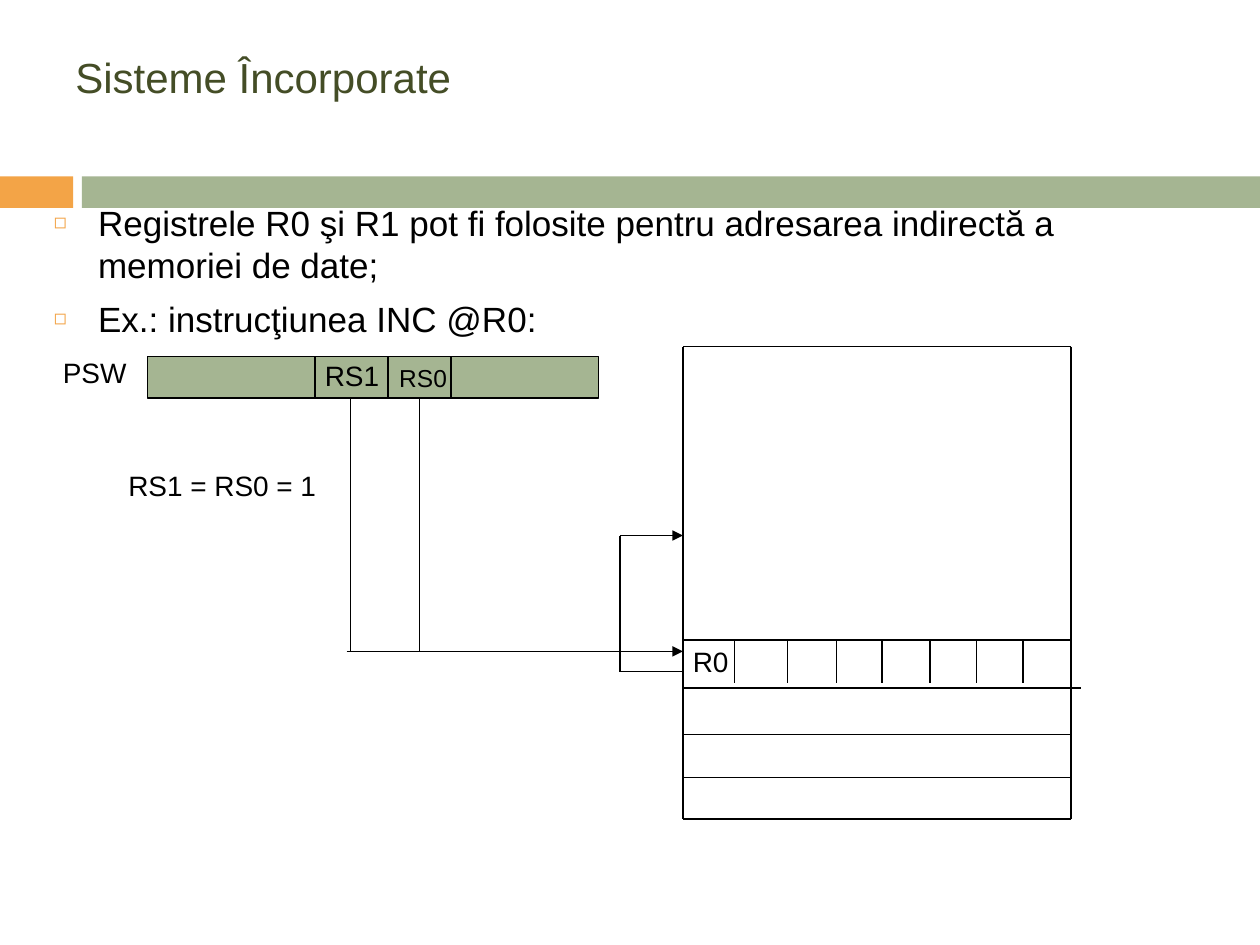
from dataclasses import dataclass
from lxml import etree
from pptx import Presentation
from pptx.dml.color import RGBColor
from pptx.enum.shapes import MSO_CONNECTOR, MSO_SHAPE
from pptx.enum.text import MSO_ANCHOR, PP_ALIGN
from pptx.oxml.ns import qn
from pptx.slide import Slide
from pptx.util import Inches, Pt

RECTANGLE = MSO_SHAPE.RECTANGLE
STRAIGHT = MSO_CONNECTOR.STRAIGHT
TOP, MIDDLE = MSO_ANCHOR.TOP, MSO_ANCHOR.MIDDLE
LEFT = PP_ALIGN.LEFT


def color(value):
    return RGBColor.from_string(value)


@dataclass
class Diagram:
    slide: Slide
    font: str = "Arial"
    ink: str = "000000"
    orange: str = "F3A447"
    green: str = "A5B592"
    heading: str = "444D26"
    line_width: float = 0.75

    def rectangle(self, left, top, width, height, fill, outlined=False):
        shape = self.slide.shapes.add_shape(
            RECTANGLE, Inches(left), Inches(top), Inches(width), Inches(height))
        shape.shadow.inherit = False
        shape.fill.solid()
        shape.fill.fore_color.rgb = color(fill)
        if outlined:
            shape.line.color.rgb = color(self.ink)
            shape.line.width = Pt(self.line_width)
        else:
            shape.line.fill.background()

    def line(self, x1, y1, x2, y2, arrow=False):
        connector = self.slide.shapes.add_connector(
            STRAIGHT, Inches(x1), Inches(y1), Inches(x2), Inches(y2))
        connector.line.color.rgb = color(self.ink)
        connector.line.width = Pt(self.line_width)
        properties = connector._element.spPr
        if arrow:
            outline = properties.find(qn("a:ln"))
            etree.SubElement(outline, qn("a:tailEnd"), type="triangle")
        etree.SubElement(properties, qn("a:effectLst"))

    def text(self, left, top, width, height, lines, size=16, ink=None,
             anchor=TOP, wrap=False):
        box = self.slide.shapes.add_textbox(
            Inches(left), Inches(top), Inches(width), Inches(height))
        frame = box.text_frame
        frame.text = "\n".join(lines)
        frame.word_wrap = wrap
        frame.vertical_anchor = anchor
        for paragraph in frame.paragraphs:
            paragraph.alignment = LEFT
            font = paragraph.runs[0].font
            font.name = self.font
            font.size = Pt(size)
            font.color.rgb = color(ink or self.ink)
        return frame

    def bullets(self, left, top, width, height, lines, size):
        frame = self.text(left, top, width, height, lines, size, wrap=True)
        for paragraph in frame.paragraphs:
            paragraph.space_before = Pt(7)
            properties = paragraph._p.get_or_add_pPr()
            properties.set("marL", str(Inches(0.35)))
            properties.set("indent", str(-Inches(0.35)))
            bullet_color = etree.SubElement(properties, qn("a:buClr"))
            etree.SubElement(bullet_color, qn("a:srgbClr"), val=self.orange)
            etree.SubElement(properties, qn("a:buSzPct"), val="60000")
            etree.SubElement(properties, qn("a:buFont"), typeface=self.font)
            etree.SubElement(properties, qn("a:buChar"), char="◻")


def draw_header(diagram):
    diagram.rectangle(0, 1.4, 0.58, 0.25, diagram.orange)
    diagram.rectangle(0.65, 1.4, 9.35, 0.25, diagram.green)
    diagram.text(0.5, 0.3, 9, 0.61, ["Sisteme Încorporate"], 24,
                 diagram.heading, MIDDLE, wrap=True)
    diagram.bullets(0.33, 1.55, 9.17, 5.7, [
        "Registrele R0 şi R1 pot fi folosite pentru adresarea indirectă a memoriei de date;",
        "Ex.: instrucţiunea INC @R0:",
    ], 20)


def draw_status_word(diagram):
    top, bottom, bus = 2.83, 3.17, 5.17
    diagram.rectangle(1.17, top, 3.58, 0.33, diagram.green, outlined=True)
    for x in (2.5, 3.08, 3.58):
        diagram.line(x, top, x, bottom)
    for x in (2.78, 3.33):
        diagram.line(x, bottom, x, bus)
    diagram.line(2.75, bus, 5.42, bus, arrow=True)
    diagram.text(0.4, 2.77, 0.71, 0.37, ["PSW"])
    diagram.text(2.48, 2.8, 0.63, 0.37, ["RS1"])
    diagram.text(3.07, 2.83, 0.58, 0.33, ["RS0"], 14)
    diagram.text(0.92, 3.67, 1.75, 0.37, ["RS1 = RS0 = 1"], wrap=True)


def draw_memory(diagram):
    left, right, top, bottom = 5.42, 8.5, 2.75, 6.5
    for x in (left, right):
        diagram.line(x, top, x, bottom)
    for y in (top, 5.08, 5.83, 6.17, bottom):
        diagram.line(left, y, right, y)
    diagram.line(left, 5.46, 8.58, 5.46)
    for x in (5.83, 6.25, 6.64, 7, 7.38, 7.75, 8.12):
        diagram.line(x, 5.08, x, 5.42)
    diagram.text(5.4, 5.07, 0.48, 0.37, ["R0"])

    pointer, source, target = 4.92, 5.33, 4.25
    diagram.line(pointer, source, left, source)
    diagram.line(pointer, source, pointer, target)
    diagram.line(pointer, target, left, target, arrow=True)


def main():
    presentation = Presentation()
    presentation.slide_width = Inches(10)
    presentation.slide_height = Inches(7.5)
    slide = presentation.slides.add_slide(presentation.slide_layouts[6])
    diagram = Diagram(slide)
    draw_header(diagram)
    draw_status_word(diagram)
    draw_memory(diagram)
    presentation.save("out.pptx")


if __name__ == "__main__":
    main()
